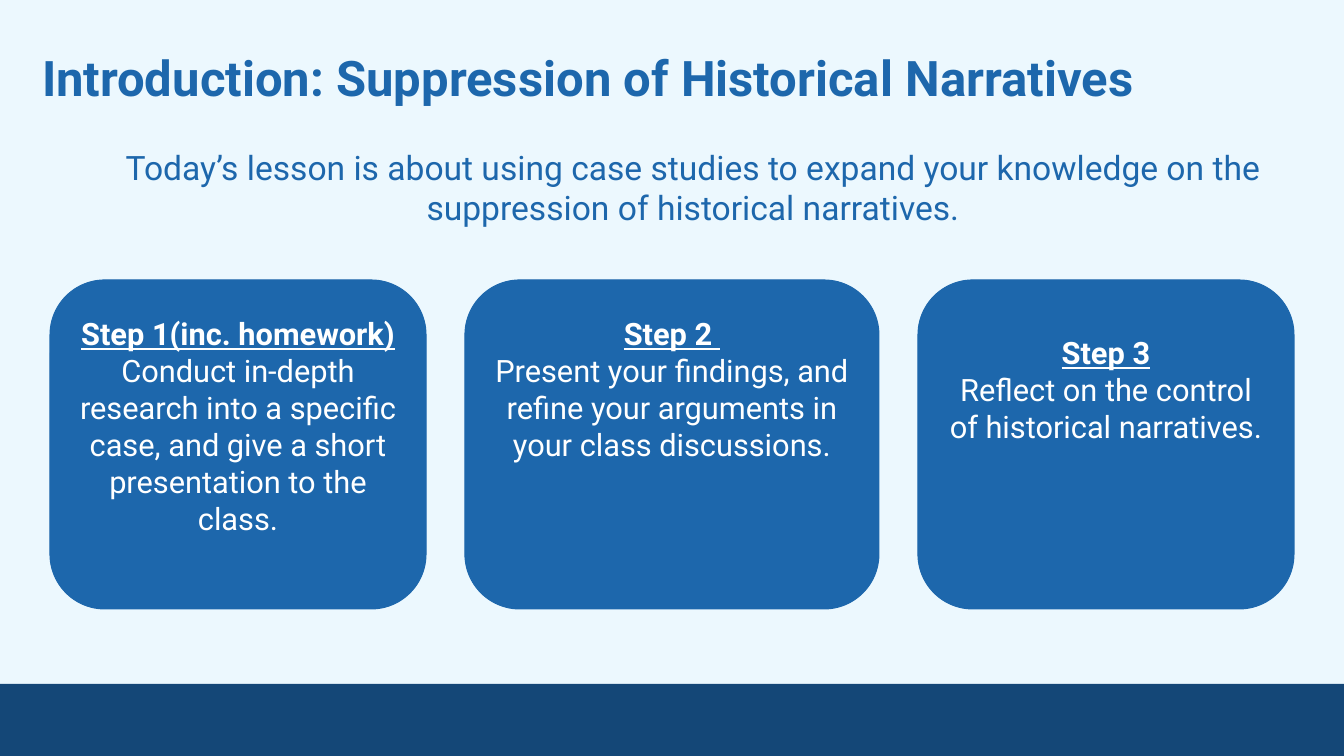
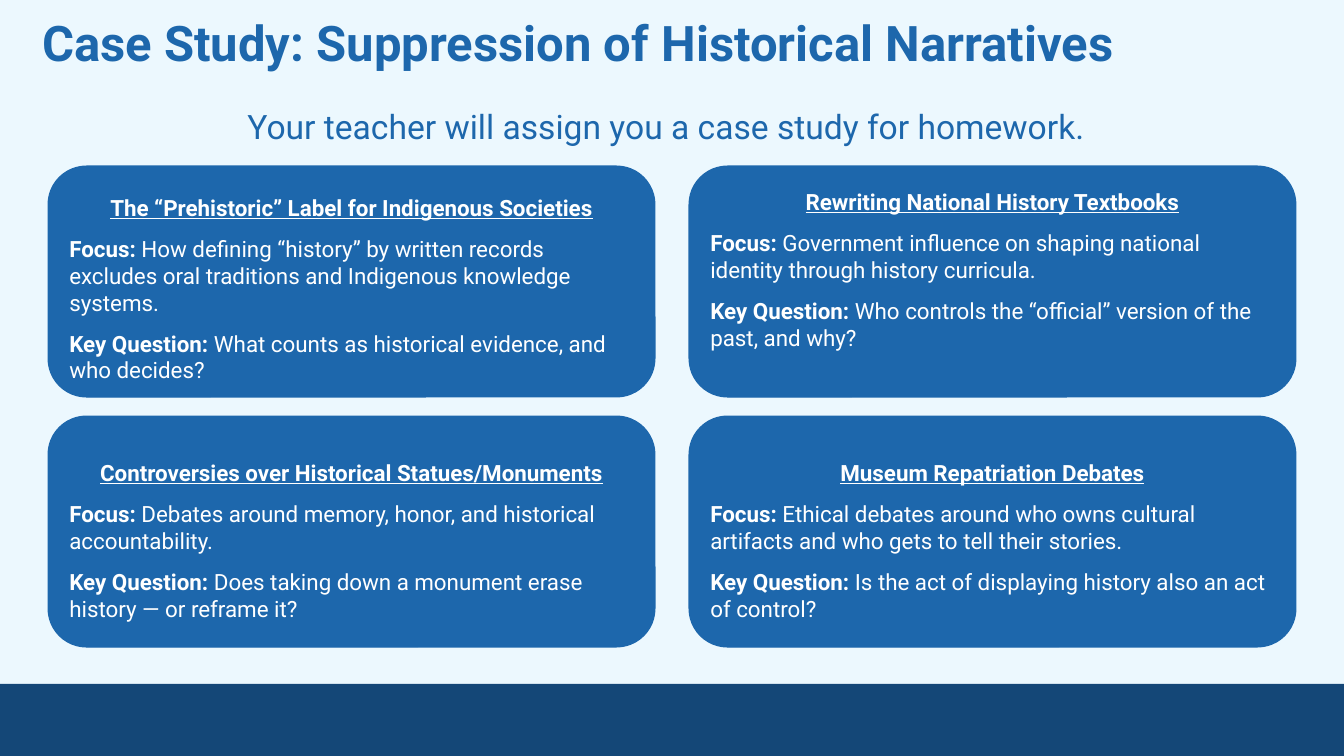
"""Build two lesson slides on the suppression of historical narratives."""
from dataclasses import dataclass

from pptx import Presentation
from pptx import util as u
from pptx.dml.color import RGBColor
from pptx.enum import shapes, text

INTRO = {
    "title": "Introduction: Suppression of Historical Narratives",
    "lead": "Today’s lesson is about using case studies to expand your knowledge "
            "on the suppression of historical narratives.",
    "cards": [
        ("Step 1(inc. homework)", 19,
         [("", "Conduct in-depth research into a specific case, and give a short "
               "presentation to the class.")]),
        ("Step 2 ", 19,
         [("", "Present your findings, and refine your arguments in your class discussions.")]),
        ("Step 3", 38,
         [("", "Reflect on the control of historical narratives.")]),
    ],
}
CASES = {
    "title": "Case Study: Suppression of Historical Narratives",
    "lead": "Your teacher will assign you a case study for homework.",
    "cards": [
        ("The “Prehistoric” Label for Indigenous Societies", 17,
         [("Focus: ", "How defining “history” by written records excludes oral traditions "
                      "and Indigenous knowledge systems."),
          ("Key Question: ", "What counts as historical evidence, and who decides?")]),
        ("Rewriting National History Textbooks", 11,
         [("Focus: ", "Government influence on shaping national identity through "
                      "history curricula."),
          ("Key Question: ", "Who controls the “official” version of the past, and why?")]),
        ("Controversies over Historical Statues/Monuments", 32,
         [("Focus: ", "Debates around memory, honor, and historical accountability."),
          ("Key Question: ", "Does taking down a monument erase history — or reframe it?")]),
        ("Museum Repatriation Debates", 32,
         [("Focus: ", "Ethical debates around who owns cultural artifacts and who gets "
                      "to tell their stories."),
          ("Key Question: ", "Is the act of displaying history also an act of control?")]),
    ],
}


@dataclass(frozen=True)
class Theme:
    font: str = "Roboto"
    paper: str = "ECF8FE"
    blue: str = "1D67AC"
    navy: str = "144777"
    white: str = "FFFFFF"
    title: int = 35
    lead: int = 24
    step: int = 22
    case: int = 16


THEME = Theme()
WIDTH, HEIGHT = 1344, 756
BAND_TOP = 684
CENTER, LEFT = text.PP_ALIGN.CENTER, text.PP_ALIGN.LEFT


def px(count):
    return u.Emu(round(count * 914400 / 100.8))


def style(font, size, color, bold=False, underline=False):
    font.name = THEME.font
    font.size = u.Pt(size)
    font.color.rgb = RGBColor.from_string(color)
    font.bold = bold
    font.underline = underline


def set_frame(frame, side, top, bottom):
    frame.word_wrap = True
    frame.vertical_anchor = text.MSO_ANCHOR.TOP
    frame.margin_left = frame.margin_right = px(side)
    frame.margin_top, frame.margin_bottom = px(top), px(bottom)


def add_text(page, place, words, inset, size, align=LEFT, bold=False):
    box = page.shapes.add_textbox(*map(px, place))
    set_frame(box.text_frame, inset, inset, inset)
    para = box.text_frame.paragraphs[0]
    para.text = words
    para.alignment = align
    style(para.font, size, THEME.blue, bold)


def add_block(page, kind, place, color):
    block = page.shapes.add_shape(kind, *map(px, place))
    block.shadow.inherit = False
    block.fill.solid()
    block.fill.fore_color.rgb = RGBColor.from_string(color)
    block.line.fill.background()
    return block


def add_card(page, place, card, size, align, gap):
    heading, top, body = card
    block = add_block(page, shapes.MSO_SHAPE.ROUNDED_RECTANGLE, place, THEME.blue)
    block.line.color.rgb = RGBColor.from_string(THEME.blue)
    block.line.width = u.Pt(0.75)
    frame = block.text_frame
    set_frame(frame, 10, top, 0)
    para = frame.paragraphs[0]
    para.text = heading
    para.alignment = CENTER
    style(para.font, size, THEME.white, bold=True, underline=True)
    for label, words in body:
        para = frame.add_paragraph()
        para.alignment = align
        para.space_before = u.Pt(gap)
        style(para.font, size, THEME.white)
        if label:
            span = para.add_run()
            span.text = label
            span.font.bold = True
        para.add_run().text = words


def add_page(deck, content, title_place, lead_place):
    page = deck.slides.add_slide(deck.slide_layouts[6])
    add_block(page, shapes.MSO_SHAPE.RECTANGLE,
              (0, BAND_TOP, WIDTH, HEIGHT - BAND_TOP), THEME.navy)
    add_text(page, title_place, content["title"], 13, THEME.title, bold=True)
    add_text(page, lead_place, content["lead"], 10, THEME.lead, CENTER)
    return page


def add_intro(deck):
    page = add_page(deck, INTRO, (29, 35, 1229, 87), (92, 137, 1202, 142))
    left, gap = 50, 39
    for card, width in zip(INTRO["cards"], (376, 414, 376)):
        add_card(page, (left, 280, width, 329), card, THEME.step, CENTER, 0)
        left += width + gap


def add_cases(deck):
    page = add_page(deck, CASES, (29, 0, 1309, 87), (65, 96, 1202, 61))
    for index, card in enumerate(CASES["cards"]):
        row, column = divmod(index, 2)
        place = (48 + column * 641, 166 + row * 250, 607, 231)
        add_card(page, place, card, THEME.case, LEFT, 10)


def main():
    deck = Presentation()
    deck.slide_width, deck.slide_height = px(WIDTH), px(HEIGHT)
    paper = deck.slide_master.background.fill
    paper.solid()
    paper.fore_color.rgb = RGBColor.from_string(THEME.paper)
    add_intro(deck)
    add_cases(deck)
    deck.save("out.pptx")


if __name__ == "__main__":
    main()
